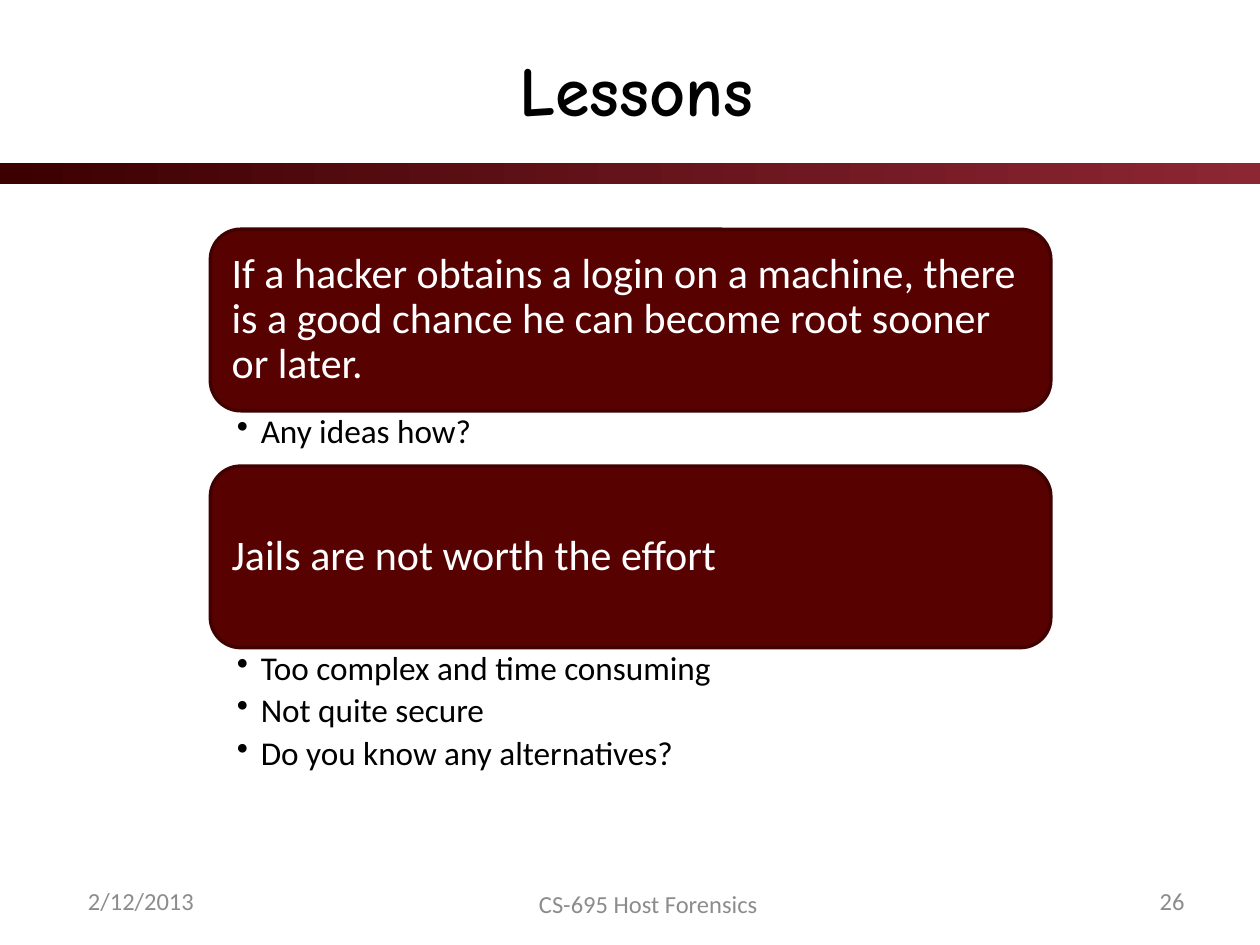
from lxml import etree
from pptx import Presentation
from pptx.dml.color import RGBColor
from pptx.enum.shapes import MSO_SHAPE
from pptx.enum.text import MSO_ANCHOR, PP_ALIGN
from pptx.oxml.ns import qn
from pptx.util import Inches, Pt

LEFT, CENTER, RIGHT = PP_ALIGN.LEFT, PP_ALIGN.CENTER, PP_ALIGN.RIGHT
TOP, MIDDLE = MSO_ANCHOR.TOP, MSO_ANCHOR.MIDDLE
RECTANGLE, ROUNDED = MSO_SHAPE.RECTANGLE, MSO_SHAPE.ROUNDED_RECTANGLE
TITLE_ONLY = 5


def color(value):
    return RGBColor.from_string(value)


def write_text(box, *lines, size=14, font="Calibri", ink="000000", bold=False,
               align=LEFT, anchor=MIDDLE, insets=(0.1, 0.05, 0.1, 0.05),
               line_spacing=1.0, space_after=0, bullet=False):
    frame = box.text_frame
    frame.word_wrap = True
    frame.vertical_anchor = anchor
    (frame.margin_left, frame.margin_top,
     frame.margin_right, frame.margin_bottom) = [Inches(inset) for inset in insets]
    for index, line in enumerate(lines):
        para = frame.add_paragraph() if index else frame.paragraphs[0]
        if bullet:
            para.level = 1
            properties = para._p.get_or_add_pPr()
            properties.set("marL", str(Inches(0.19)))
            properties.set("indent", str(-Inches(0.19)))
            etree.SubElement(properties, qn("a:buChar")).set("char", "•")
        para.alignment = align
        para.line_spacing = line_spacing
        para.space_after = Pt(space_after)
        span = para.add_run()
        span.text = line
        span.font.size = Pt(size)
        span.font.name = font
        span.font.bold = bold
        span.font.color.rgb = color(ink)


deck = Presentation()
deck.slide_width, deck.slide_height = Inches(10), Inches(7.5)
page = deck.slides.add_slide(deck.slide_layouts[TITLE_ONLY])
shapes = page.shapes

# Title
title = shapes.title
title.left, title.top = Inches(0.6), Inches(0.15)
title.width, title.height = Inches(8.9), Inches(1.1)
write_text(title, "Lessons", size=40, font="Comic Neue", bold=True, align=CENTER)

# Gradient band under the title
band = shapes.add_shape(RECTANGLE, 0, Inches(1.29), deck.slide_width, Inches(0.17))
band.shadow.inherit = False
band.line.fill.background()
band.fill.gradient()
band.fill.gradient_angle = 0
for stop, position, shade in zip(band.fill.gradient_stops, (0, 1), ("3C0000", "8C2633")):
    stop.position = position
    stop.color.rgb = color(shade)

# Lessons, each a rounded panel with bullets beneath
lessons = [
    ("If a hacker obtains a login on a machine, there is a good chance "
     "he can become root sooner or later.",
     ["Any ideas how?"], 0.43),
    ("Jails are not worth the effort",
     ["Too complex and time consuming", "Not quite secure",
      "Do you know any alternatives?"], 1.09),
]
left, width, panel_height = Inches(1.67), Inches(6.67), Inches(1.44)
top = Inches(1.82)
for lesson, points, points_height in lessons:
    panel = shapes.add_shape(ROUNDED, left, top, width, panel_height)
    panel.shadow.inherit = False
    panel.fill.solid()
    panel.fill.fore_color.rgb = color("580101")
    panel.line.color.rgb = color("410101")
    panel.line.width = Pt(2)
    write_text(panel, lesson, size=24, ink="FFFFFF", line_spacing=0.9,
               insets=(0.1, 0.1, 0.1, 0.1))
    top += panel_height

    box = shapes.add_textbox(left, top, width, Inches(points_height))
    write_text(box, *points, size=19, anchor=TOP, insets=(0.21, 0.03, 0.19, 0.03),
               line_spacing=0.9, space_after=3.8, bullet=True)
    top += Inches(points_height + 0.01)

# Footer
for text, x, y, footer_width, align in [
    ("2/12/2013", 0.6, 6.95, 1.83, LEFT),
    ("CS-695 Host Forensics", 3.9, 6.97, 2.49, CENTER),
    ("26", 7.67, 6.95, 1.83, RIGHT),
]:
    box = shapes.add_textbox(Inches(x), Inches(y), Inches(footer_width), Inches(0.4))
    write_text(box, text, ink="8C8C8C", align=align)

deck.save("out.pptx")
